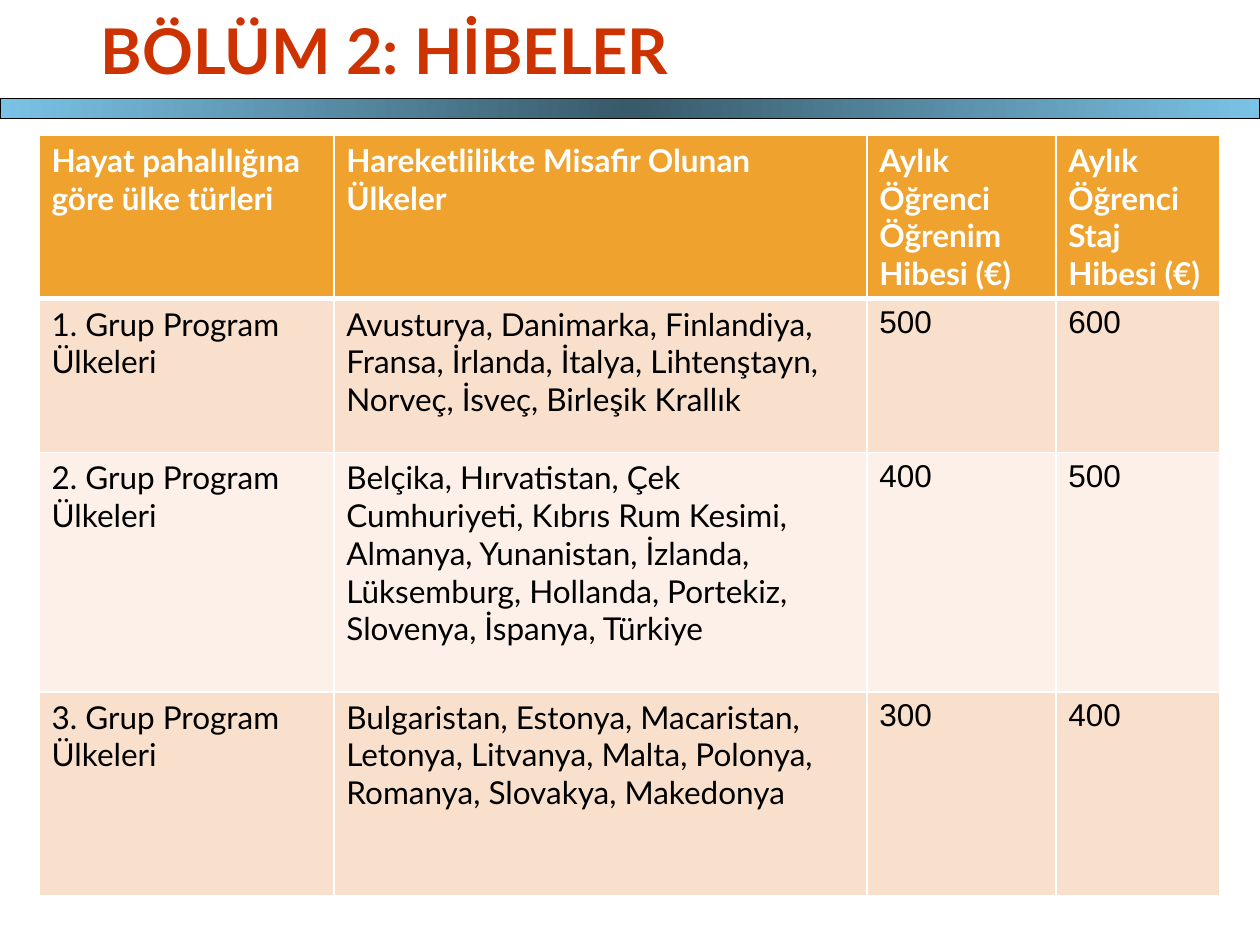
import copy
from typing import NamedTuple

import pptx
import pptx.dml.color
import pptx.enum.shapes
import pptx.enum.text
import pptx.oxml
import pptx.oxml.ns
import pptx.util

RGBColor = pptx.dml.color.RGBColor
Inches = pptx.util.Inches
qn = pptx.oxml.ns.qn

WHITE = RGBColor(0xFF, 0xFF, 0xFF)
BLACK = RGBColor(0x00, 0x00, 0x00)
TITLE_RED = RGBColor(0xCC, 0x33, 0x00)
HEADER_ORANGE = RGBColor(0xF0, 0xA2, 0x2E)
BAND_COLORS = (RGBColor(0xF9, 0xE0, 0xCD), RGBColor(0xFC, 0xF0, 0xE8))
LIGHT_BLUE = RGBColor(0x7A, 0xC2, 0xE6)
DARK_BLUE = RGBColor(0x38, 0x5A, 0x6A)

WIDTH, HEIGHT = Inches(10), Inches(7.5)
TITLE_HEIGHT = Inches(0.78)
COLUMN_WIDTHS = (2.34, 4.23, 1.5, 1.3)
ROW_HEIGHTS = (1.29, 1.22, 1.9, 1.62)
THIN, THICK = 1, 3


class CountryGroup(NamedTuple):
    name: str
    countries: str
    study_grant: str
    internship_grant: str


HEADINGS = CountryGroup(
    "Hayat pahalılığına göre ülke türleri",
    "Hareketlilikte Misafir Olunan Ülkeler",
    "Aylık Öğrenci Öğrenim Hibesi (€)",
    "Aylık Öğrenci Staj Hibesi (€)",
)
GROUPS = (
    CountryGroup(
        "1. Grup Program Ülkeleri",
        "Avusturya, Danimarka, Finlandiya, Fransa, İrlanda, İtalya, "
        "Lihtenştayn, Norveç, İsveç, Birleşik Krallık",
        "500", "600",
    ),
    CountryGroup(
        "2. Grup Program Ülkeleri",
        "Belçika, Hırvatistan, Çek Cumhuriyeti, Kıbrıs Rum Kesimi, Almanya, "
        "Yunanistan, İzlanda, Lüksemburg, Hollanda, Portekiz, Slovenya, "
        "İspanya, Türkiye",
        "400", "500",
    ),
    CountryGroup(
        "3. Grup Program Ülkeleri",
        "Bulgaristan, Estonya, Macaristan, Letonya, Litvanya, Malta, Polonya, "
        "Romanya, Slovakya, Makedonya",
        "300", "400",
    ),
)


def write_text(frame, text: str, *, size: float = 18, font: str = "Lato",
               color: RGBColor = BLACK, bold: bool = False) -> None:
    paragraph = frame.paragraphs[0]
    paragraph.alignment = pptx.enum.text.PP_ALIGN.LEFT
    run = paragraph.add_run()
    run.text = text
    run.font.size = pptx.util.Pt(size)
    run.font.name = font
    run.font.color.rgb = color
    run.font.bold = bold


def set_borders(cell, top: float, bottom: float) -> None:
    """Give a cell white edges; the schema wants them ahead of its fill."""
    properties = cell._tc.get_or_add_tcPr()
    edges = (("lnL", THIN), ("lnR", THIN), ("lnT", top), ("lnB", bottom))
    for position, (edge, points) in enumerate(edges):
        properties.insert(position, pptx.oxml.parse_xml(
            f'<a:{edge} {pptx.oxml.ns.nsdecls("a")} w="{pptx.util.Pt(points)}">'
            f'<a:solidFill><a:srgbClr val="{WHITE}"/></a:solidFill></a:{edge}>'
        ))


def add_title(slide, text: str) -> None:
    title = slide.shapes.title
    title.left, title.top = int(WIDTH * 0.07), 0
    title.width, title.height = int(WIDTH * 0.93), TITLE_HEIGHT
    title.text_frame.auto_size = pptx.enum.text.MSO_AUTO_SIZE.NONE
    title.text_frame.vertical_anchor = pptx.enum.text.MSO_ANCHOR.MIDDLE
    write_text(title.text_frame, text, size=36, color=TITLE_RED, bold=True)


def add_divider(slide) -> None:
    divider = slide.shapes.add_shape(
        pptx.enum.shapes.MSO_SHAPE.RECTANGLE, 0, TITLE_HEIGHT, WIDTH, Inches(0.16))
    divider.shadow.inherit = False
    divider.line.color.rgb = BLACK
    divider.line.width = pptx.util.Pt(0.75)
    divider.fill.gradient()
    divider.fill.gradient_angle = 0
    stop_list = divider._element.spPr.find(qn("a:gradFill")).find(qn("a:gsLst"))
    stop_list.append(copy.deepcopy(stop_list[0]))
    stops = ((0, LIGHT_BLUE), (0.5, DARK_BLUE), (1, LIGHT_BLUE))
    for stop, (position, color) in zip(divider.fill.gradient_stops, stops):
        stop.position = position
        stop.color.rgb = color


def fill_row(table, row: int, group: CountryGroup) -> None:
    is_header = row == 0
    for column, text in enumerate(group):
        cell = table.cell(row, column)
        cell.fill.solid()
        cell.fill.fore_color.rgb = (
            HEADER_ORANGE if is_header else BAND_COLORS[(row - 1) % 2])
        set_borders(cell, top=THICK if row == 1 else THIN,
                    bottom=THICK if is_header else THIN)
        write_text(cell.text_frame, text, bold=is_header,
                   color=WHITE if is_header else BLACK,
                   font="Arial" if text.isdigit() else "Lato")


def add_grant_table(slide) -> None:
    rows = (HEADINGS, *GROUPS)
    table = slide.shapes.add_table(
        len(rows), len(COLUMN_WIDTHS), Inches(0.31), Inches(1.07),
        Inches(sum(COLUMN_WIDTHS)), Inches(sum(ROW_HEIGHTS))).table
    for column, width in zip(table.columns, COLUMN_WIDTHS):
        column.width = Inches(width)
    for index, (group, height) in enumerate(zip(rows, ROW_HEIGHTS)):
        table.rows[index].height = Inches(height)
        fill_row(table, index, group)


def main() -> None:
    presentation = pptx.Presentation()
    presentation.slide_width, presentation.slide_height = WIDTH, HEIGHT
    slide = presentation.slides.add_slide(presentation.slide_layouts[5])
    add_title(slide, "BÖLÜM 2: HİBELER")
    add_divider(slide)
    add_grant_table(slide)
    presentation.save("out.pptx")


if __name__ == "__main__":
    main()
